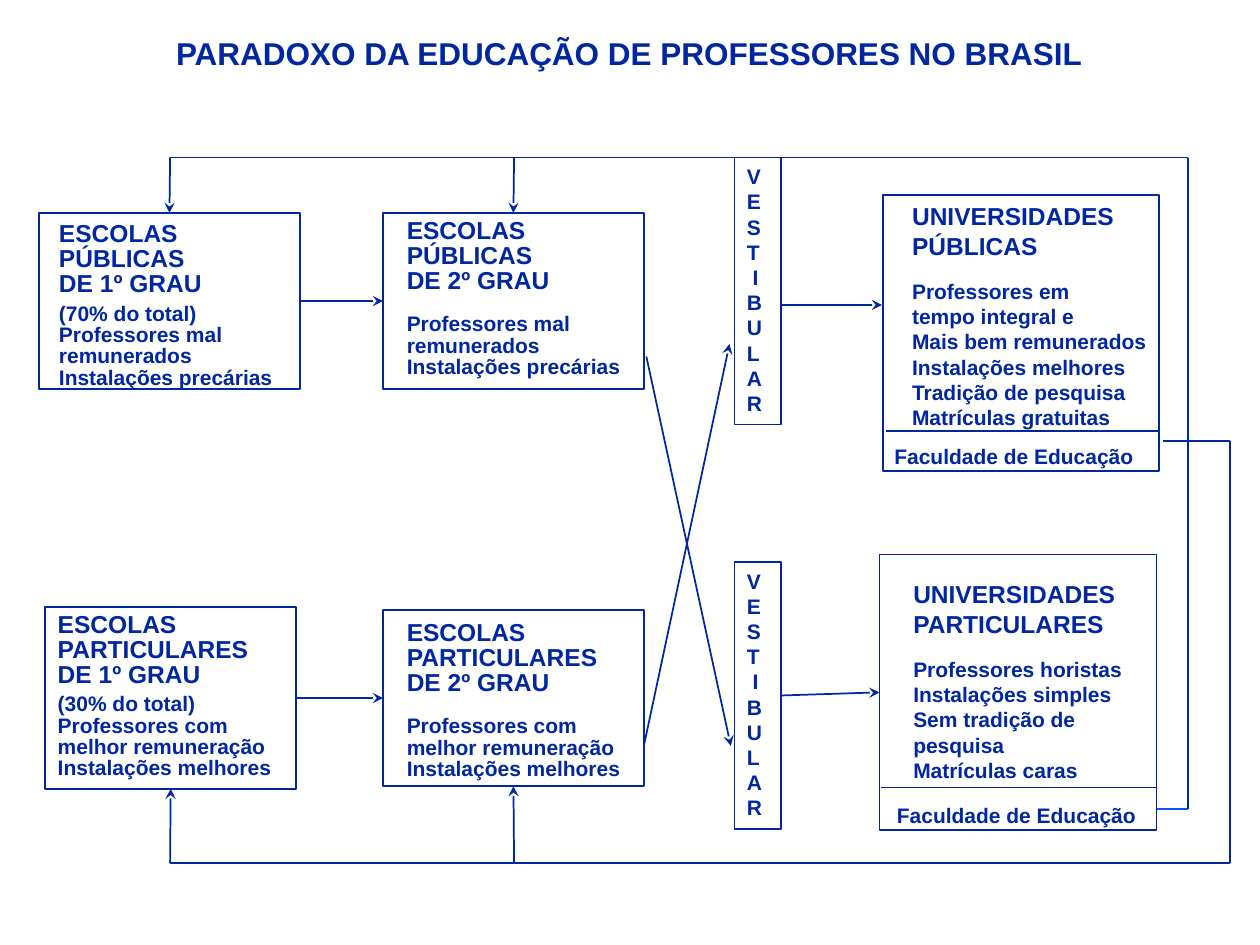
import pptx
import pptx.dml.color
import pptx.enum.dml
import pptx.enum.shapes
import pptx.enum.text
import pptx.oxml
import pptx.util
import lxml.etree

WIDTH, HEIGHT = pptx.util.Inches(10), pptx.util.Inches(7.5)
COLUMNS, ROWS = 100, 75
NAVY, BRIGHT_BLUE = "00279F", "114FFB"
TOP, LEFT, BOTTOM, RIGHT = range(4)
ALIGN = pptx.enum.text.PP_ALIGN


def grid(*lengths):
    """Turn alternating column and row counts into slide lengths."""
    units = (WIDTH / COLUMNS, HEIGHT / ROWS)
    return [round(length * units[index % 2]) for index, length in enumerate(lengths)]


def color(value):
    """Make a colour from a hex string."""
    return pptx.dml.color.RGBColor.from_string(value)


def prepare_frame(shape, wrap=True):
    """Anchor the text at the top and fit the shape to it."""
    frame = shape.text_frame
    frame.word_wrap = wrap
    frame.auto_size = pptx.enum.text.MSO_AUTO_SIZE.SHAPE_TO_FIT_TEXT
    frame.vertical_anchor = pptx.enum.text.MSO_ANCHOR.TOP
    frame.margin_left = frame.margin_right = pptx.util.Inches(0.1)
    frame.margin_top = frame.margin_bottom = pptx.util.Inches(0.05)
    return frame


def write(frame, text, size=12, spacing=1.0, before=0, align=ALIGN.LEFT):
    """Append one formatted paragraph to the frame."""
    first = frame.paragraphs[0]
    paragraph = frame.add_paragraph() if first.runs else first
    paragraph.alignment = align
    paragraph.line_spacing = spacing
    paragraph.space_before = pptx.util.Pt(before)
    run = paragraph.add_run()
    run.text = text
    run.font.name = "Arial"
    run.font.size = pptx.util.Pt(size)
    run.font.bold = True
    run.font.color.rgb = color(NAVY)


def write_block(frame, headings, details, gap, **style):
    """Write large headings, a gap and the details below it."""
    for heading in headings:
        write(frame, heading, size=14, **style)
    for index, detail in enumerate(details):
        write(frame, detail, before=0 if index else gap, **style)


def add_box(slide, *place):
    """Draw an outlined rectangle without fill."""
    rectangle = pptx.enum.shapes.MSO_SHAPE.RECTANGLE
    shape = slide.shapes.add_shape(rectangle, *grid(*place))
    shape.shadow.inherit = False
    shape.fill.background()
    shape.line.color.rgb = color(NAVY)
    shape.line.width = pptx.util.Pt(1)
    return shape


def add_label(slide, *place, wrap=True):
    """Add a text box and return its frame."""
    return prepare_frame(slide.shapes.add_textbox(*grid(*place)), wrap)


def add_line(slide, start, end, arrow=False, hex_color=NAVY):
    """Draw a line between points or (shape, side) joints."""
    points = [grid(*place) if isinstance(place[0], (int, float)) else None
              for place in (start, end)]
    straight = pptx.enum.shapes.MSO_CONNECTOR.STRAIGHT
    line = slide.shapes.add_connector(
        straight, *(points[0] or (0, 0)), *(points[1] or (0, 0)))
    if points[0] is None:
        line.begin_connect(*start)
    if points[1] is None:
        line.end_connect(*end)
    line.line.color.rgb = color(hex_color)
    line.line.width = pptx.util.Pt(1)
    namespace = pptx.oxml.ns.qn
    if arrow:
        outline = line.line._get_or_add_ln()
        lxml.etree.SubElement(outline, namespace("a:tailEnd"), type="stealth")
    lxml.etree.SubElement(line._element.spPr, namespace("a:effectLst"))


def add_path(slide, *points):
    """Draw a chain of lines through the points."""
    for start, end in zip(points, points[1:]):
        add_line(slide, start, end)


def add_exam(slide, row):
    """Draw the narrow entrance exam box with stacked letters."""
    box = add_box(slide, 58.3, row, 3.7, 21.2)
    frame = prepare_frame(box, wrap=False)
    for letter in ["V", "E", "S", "T", " I", "B", "U", "L", "A", "R"]:
        write(frame, letter)
    return box


def add_schools(slide):
    """Draw the four school boxes and their texts."""
    public = [add_box(slide, column, 16.9, 20.7, 14) for column in (3.1, 30.4)]
    private = [add_box(slide, 3.6, 48.2, 19.9, 14.4),
               add_box(slide, 30.4, 48.4, 20.7, 14)]
    poor = ["Professores mal", "remunerados", "Instalações precárias"]
    good = ["Professores com", "melhor remuneração", "Instalações melhores"]
    write_block(add_label(slide, 3.7, 17.2, 20.7, 14.4),
                ["ESCOLAS PÚBLICAS", "DE 1º GRAU"], ["(70% do total)"] + poor,
                gap=3.5, spacing=0.85, align=ALIGN.JUSTIFY)
    write_block(add_label(slide, 31.3, 16.9, 21.5, 13.9),
                ["ESCOLAS PÚBLICAS", "DE 2º GRAU"], poor,
                gap=11.7, spacing=0.85, align=ALIGN.JUSTIFY)
    write_block(prepare_frame(private[0]),
                ["ESCOLAS PARTICULARES", "DE 1º GRAU"], ["(30% do total)"] + good,
                gap=3.5, spacing=0.85)
    write_block(add_label(slide, 31.3, 48.8, 22.5, 15.6),
                ["ESCOLAS PARTICULARES", "DE 2º GRAU"], good,
                gap=11.7, spacing=0.85)
    return public, private


def add_universities(slide):
    """Draw both universities with their education faculties."""
    public = add_box(slide, 70.1, 15.5, 21.9, 21.9)
    private = add_box(slide, 69.8, 44, 22, 21.9)
    write_block(add_label(slide, 71.4, 15.5, 20.8, 19.4, wrap=False),
                ["UNIVERSIDADES", "PÚBLICAS"],
                ["Professores em", "tempo integral e", "Mais bem remunerados",
                 "Instalações melhores", "Tradição de pesquisa",
                 "Matrículas gratuitas"], gap=10.4)
    write_block(add_label(slide, 71.5, 45.5, 18.7, 17.3, wrap=False),
                ["UNIVERSIDADES", "PARTICULARES"],
                ["Professores horistas", "Instalações simples", "Sem tradição de",
                 "pesquisa", "Matrículas caras"], gap=10.4)
    for column, row, divider_start, divider_end, divider_row in (
            (70, 34.7, 70.3, 92, 34.2), (70.2, 63.2, 69.9, 91.8, 62.5)):
        write(add_label(slide, column, row, 21.2, 3, wrap=False),
              "Faculdade de Educação")
        add_line(slide, (divider_start, divider_row), (divider_end, divider_row))
    return public, private


def add_flows(slide, public, private, exam, private_university):
    """Link schools, exams and universities, with both return paths."""
    for first, second in (public, private):
        add_line(slide, (first, RIGHT), (second, LEFT), arrow=True)
    add_line(slide, (61.9, 24.2), (70, 24.2), arrow=True)
    add_line(slide, (exam, RIGHT), (private_university, LEFT), arrow=True)
    add_line(slide, (51.1, 59.2), (57.9, 27.3), arrow=True)
    add_line(slide, (51.3, 28.3), (58, 59.2), arrow=True)
    add_line(slide, (91.8, 64.2), (94.3, 64.2), hex_color=BRIGHT_BLUE)
    add_path(slide, (94.3, 64.2), (94.3, 12.5), (13.5, 12.5))
    add_path(slide, (92.3, 35), (97.6, 35), (97.6, 68.5), (13.5, 68.5))
    for column, upper, lower in zip((13.5, 40.8), public, private):
        add_line(slide, (column, 12.5), (upper, TOP), arrow=True)
        add_line(slide, (column, 68.5), (lower, BOTTOM), arrow=True)


def add_title(slide):
    """Place the heading in the title placeholder."""
    title = slide.shapes.title
    title.left, title.top, title.width, title.height = grid(12.6, 2.2, 74.7, 4)
    write(prepare_frame(title, wrap=False),
          "PARADOXO DA EDUCAÇÃO DE PROFESSORES NO BRASIL",
          size=18, align=ALIGN.CENTER)


def main():
    """Build and save the slide."""
    presentation = pptx.Presentation()
    presentation.slide_width, presentation.slide_height = WIDTH, HEIGHT
    slide = presentation.slides.add_slide(presentation.slide_layouts[5])
    add_title(slide)
    public, private = add_schools(slide)
    exams = [add_exam(slide, row) for row in (12.5, 44.6)]
    universities = add_universities(slide)
    add_flows(slide, public, private, exams[1], universities[1])
    presentation.save("out.pptx")


if __name__ == "__main__":
    main()
